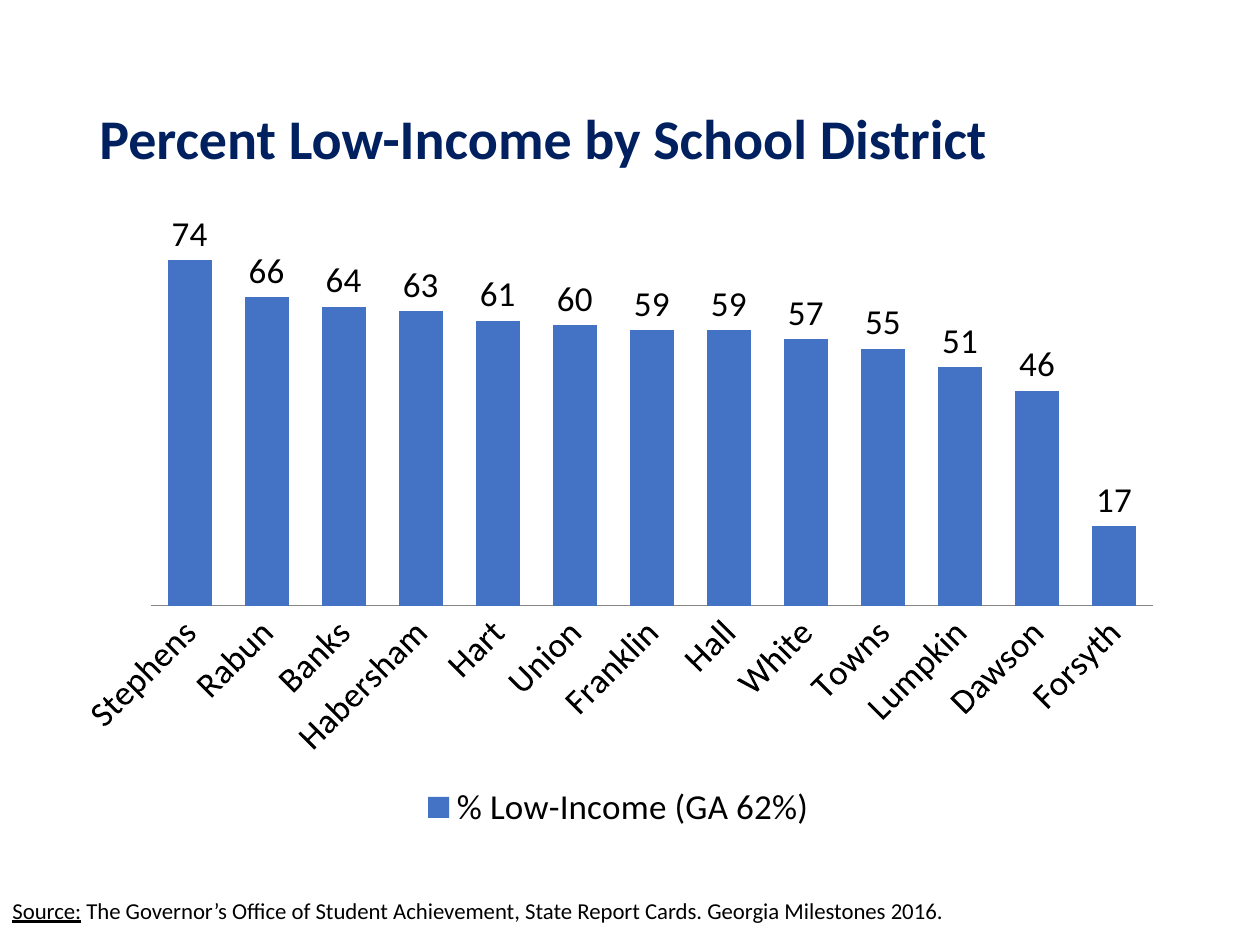
from dataclasses import dataclass

from lxml.etree import SubElement
from pptx import Presentation
from pptx.chart.data import CategoryChartData
from pptx.dml.color import RGBColor
from pptx.enum.chart import XL_CHART_TYPE, XL_LABEL_POSITION, XL_LEGEND_POSITION, XL_TICK_MARK
from pptx.enum.text import MSO_ANCHOR, MSO_AUTO_SIZE
from pptx.oxml.ns import qn
from pptx.util import Emu, Pt


@dataclass(frozen=True)
class Theme:
    font: str = "Calibri"
    navy: RGBColor = RGBColor(0x00, 0x20, 0x60)
    black: RGBColor = RGBColor(0x00, 0x00, 0x00)
    blue: RGBColor = RGBColor(0x44, 0x72, 0xC4)
    gray: RGBColor = RGBColor(0x86, 0x86, 0x86)
    title_size: int = 32
    chart_size: int = 20
    source_size: int = 13


THEME = Theme()
SERIES_NAME = "% Low-Income (GA 62%)"
LOW_INCOME = {
    "Stephens": 74, "Rabun": 66, "Banks": 64, "Habersham": 63, "Hart": 61,
    "Union": 60, "Franklin": 59, "Hall": 59, "White": 57, "Towns": 55,
    "Lumpkin": 51, "Dawson": 46, "Forsyth": 17,
}


def px(length):
    return Emu(length * 914400 // 126)


def box(*lengths):
    return [px(length) for length in lengths]


def style_font(font, size, color, bold=False):
    font.name = THEME.font
    font.size = Pt(size)
    font.bold = bold
    font.color.rgb = color


def add_text(slide, bounds, runs, size, color, bold=False, line_spacing=1.0, anchor=MSO_ANCHOR.TOP):
    frame = slide.shapes.add_textbox(*box(*bounds)).text_frame
    frame.word_wrap = True
    frame.vertical_anchor = anchor
    paragraph = frame.paragraphs[0]
    paragraph.line_spacing = line_spacing
    style_font(paragraph.font, size, color, bold)
    for text, underline in runs:
        run = paragraph.add_run()
        run.text = text
        run.font.underline = underline
    return frame


def set_plot_area(chart, **fractions):
    plot_area = chart._chartSpace.chart.plotArea
    layout = plot_area.find(qn("c:layout"))
    if layout is None:
        layout = SubElement(plot_area, qn("c:layout"))
        plot_area.insert(0, layout)
    manual = SubElement(layout, qn("c:manualLayout"))
    settings = {"layoutTarget": "inner", "xMode": "edge", "yMode": "edge", **fractions}
    for name, value in settings.items():
        SubElement(manual, qn(f"c:{name}")).set("val", str(value))


def style_axes(chart):
    districts = chart.category_axis
    districts.major_tick_mark = XL_TICK_MARK.NONE
    districts.format.line.color.rgb = THEME.gray
    districts.format.line.width = Pt(0.75)
    style_font(districts.tick_labels.font, THEME.chart_size, THEME.black)
    districts._element.find(qn("c:txPr")).find(qn("a:bodyPr")).set("rot", "-2700000")
    percent = chart.value_axis
    percent.minimum_scale = 0
    percent.maximum_scale = 80
    percent.has_major_gridlines = False
    percent.visible = False


def add_column_chart(slide, bounds):
    data = CategoryChartData(number_format="0")
    data.categories = list(LOW_INCOME)
    data.add_series(SERIES_NAME, list(LOW_INCOME.values()))
    chart = slide.shapes.add_chart(XL_CHART_TYPE.COLUMN_CLUSTERED, *box(*bounds), data).chart
    style_font(chart.font, THEME.chart_size, THEME.black)
    chart.has_title = False
    chart.has_legend = True
    chart.legend.position = XL_LEGEND_POSITION.BOTTOM
    chart.legend.include_in_layout = False
    style_axes(chart)

    plot = chart.plots[0]
    plot.gap_width = 75
    plot.vary_by_categories = False
    series = plot.series[0]
    series.format.fill.solid()
    series.format.fill.fore_color.rgb = THEME.blue
    labels = series.data_labels
    labels.show_value = True
    labels.number_format = "0"
    labels.number_format_is_linked = False
    labels.position = XL_LABEL_POSITION.OUTSIDE_END
    style_font(labels.font, THEME.chart_size, THEME.black)
    set_plot_area(chart, x=0.08, y=0.03, w=0.9, h=0.6)


def main():
    presentation = Presentation()
    presentation.slide_width, presentation.slide_height = box(1260, 945)
    slide = presentation.slides.add_slide(presentation.slide_layouts[6])
    add_text(slide, (87, 50, 1086, 183), [("Percent Low-Income by School District", False)],
             THEME.title_size, THEME.navy, bold=True, line_spacing=0.9, anchor=MSO_ANCHOR.MIDDLE)
    source = add_text(
        slide, (0, 900, 1103, 29),
        [("Source:", True),
         (" The Governor’s Office of Student Achievement, State Report Cards. Georgia Milestones 2016.", False)],
        THEME.source_size, THEME.black, line_spacing=0.6)
    source.auto_size = MSO_AUTO_SIZE.SHAPE_TO_FIT_TEXT
    add_column_chart(slide, (62, 212, 1113, 624))
    presentation.save("out.pptx")


if __name__ == "__main__":
    main()
